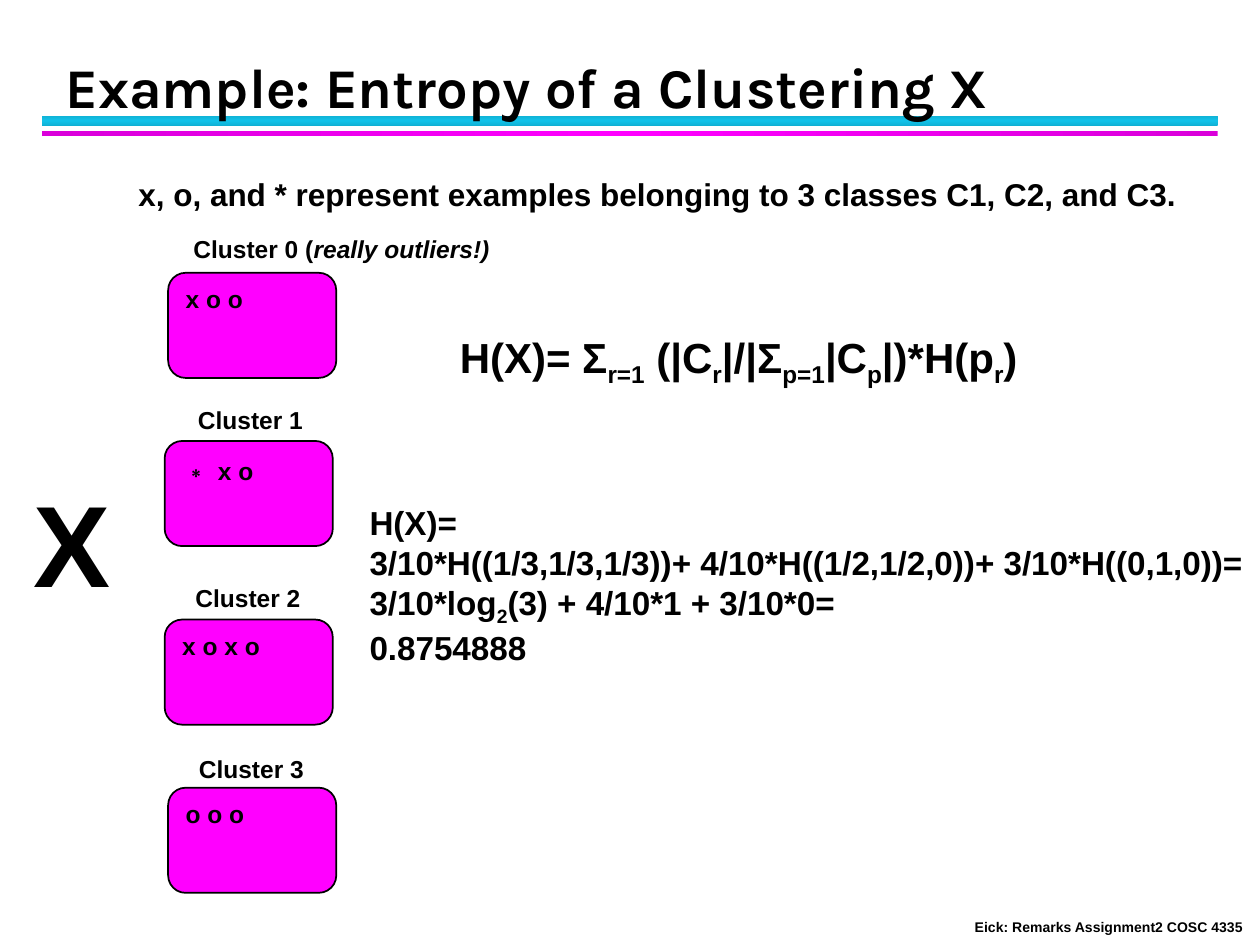
import copy
import dataclasses

import pptx
import pptx.dml.color
import pptx.enum.shapes
import pptx.enum.text
import pptx.oxml.ns
import pptx.util
from pptx.util import Cm


@dataclasses.dataclass(frozen=True)
class Theme:
    body_font: str = "Arial"
    title_font: str = "Karla"
    ink: str = "000000"
    cluster: str = "FF00FF"
    cyan_edge: str = "10B0D3"
    cyan_middle: str = "12C2E9"
    magenta_edge: str = "DA00DA"
    magenta_middle: str = "FF00FF"
    title: int = 32
    title_line: int = 36
    symbol: int = 66
    formula: int = 24
    working: int = 19
    intro: int = 18
    star: int = 16
    label: int = 14
    footer: int = 8


def rgb(value):
    return pptx.dml.color.RGBColor.from_string(value)


def write(para, text, *, size, font, color, marked_size=None,
          marked_italic=False, marked_base=None):
    """Write bold text; parts between underscores take the marked format."""
    para.alignment = pptx.enum.text.PP_ALIGN.LEFT
    for index, part in enumerate(text.split("_")):
        if not part:
            continue
        marked = index % 2 == 1
        span = para.add_run()
        span.text = part
        span.font.name = font
        span.font.bold = True
        span.font.color.rgb = rgb(color)
        span.font.size = pptx.util.Pt(marked_size if marked and marked_size else size)
        if marked and marked_italic:
            span.font.italic = True
        if marked and marked_base:
            span.font._element.set("baseline", str(marked_base * 1000))


class SlideBuilder:
    def __init__(self, deck, theme):
        self.theme = theme
        self.page = deck.slides.add_slide(deck.slide_layouts[5])
        self.shapes = self.page.shapes

    def title(self, text, left, top, width, height):
        box = self.shapes.title
        box.left, box.top, box.width, box.height = map(Cm, (left, top, width, height))
        frame = box.text_frame
        frame.auto_size = pptx.enum.text.MSO_AUTO_SIZE.NONE
        frame.vertical_anchor = pptx.enum.text.MSO_ANCHOR.BOTTOM
        para = frame.paragraphs[0]
        para.line_spacing = pptx.util.Pt(self.theme.title_line)
        write(para, text, size=self.theme.title, font=self.theme.title_font,
              color=self.theme.ink)
        # The descenders of the title lie over the bars.
        self.shapes._spTree.append(box._element)

    def bar(self, top, height, edge, middle, angle):
        bar = self.shapes.add_shape(pptx.enum.shapes.MSO_SHAPE.RECTANGLE,
                                    Cm(0.85), Cm(top), Cm(23.7), Cm(height))
        bar.shadow.inherit = False
        bar.line.fill.background()
        bar.fill.gradient()
        bar.fill.gradient_angle = angle
        stops = bar._element.spPr.find(".//" + pptx.oxml.ns.qn("a:gsLst"))
        stops.append(copy.deepcopy(stops[0]))
        for stop, position, color in zip(bar.fill.gradient_stops, (0, 0.5, 1),
                                         (edge, middle, edge)):
            stop.position = position
            stop.color.rgb = rgb(color)

    def text(self, text, left, top, width, height, size, wrap=False, **marks):
        box = self.shapes.add_textbox(Cm(left), Cm(top), Cm(width), Cm(height))
        frame = box.text_frame
        frame.word_wrap = wrap
        frame.auto_size = pptx.enum.text.MSO_AUTO_SIZE.SHAPE_TO_FIT_TEXT
        for index, line in enumerate(text.split("\n")):
            para = frame.add_paragraph() if index else frame.paragraphs[0]
            write(para, line, size=size, font=self.theme.body_font,
                  color=self.theme.ink, **marks)

    def cluster(self, members, left, top):
        box = self.shapes.add_shape(pptx.enum.shapes.MSO_SHAPE.ROUNDED_RECTANGLE,
                                    Cm(left), Cm(top), Cm(3.39), Cm(2.12))
        box.shadow.inherit = False
        box.fill.solid()
        box.fill.fore_color.rgb = rgb(self.theme.cluster)
        box.line.color.rgb = rgb(self.theme.ink)
        box.line.width = pptx.util.Pt(1)
        box.text_frame.vertical_anchor = pptx.enum.text.MSO_ANCHOR.TOP
        write(box.text_frame.paragraphs[0], members, size=self.theme.label,
              font=self.theme.body_font, color=self.theme.ink,
              marked_size=self.theme.star)


def main():
    theme = Theme()
    deck = pptx.Presentation()
    deck.slide_width, deck.slide_height = Cm(25.4), Cm(19.05)
    slide = SlideBuilder(deck, theme)

    slide.bar(2.33, 0.21, theme.cyan_edge, theme.cyan_middle, 90)
    slide.bar(2.64, 0.11, theme.magenta_edge, theme.magenta_middle, 0)
    slide.text("Eick: Remarks Assignment2 COSC 4335", 19.4, 18.4, 6, 0.6, theme.footer)
    slide.title("Example: Entropy of a Clustering X", 1.06, 0.42, 23, 2.12)

    slide.text("x, o, and * represent examples belonging to 3 classes C1, C2, and C3.",
               2.54, 3.4, 21.64, 1.02, theme.intro)

    # Members, box left and top, label, label left, top and width
    clusters = [
        ("x o o", 3.39, 5.5, "Cluster 0 (_really outliers!)_", 3.65, 4.6, 6.5),
        ("_∗ _x o", 3.32, 8.89, "Cluster 1", 3.74, 8.04, 2.65),
        ("x o x o", 3.32, 12.49, "Cluster 2", 3.69, 11.63, 2.65),
        ("o o o", 3.39, 15.88, "Cluster 3", 3.76, 15.07, 2.65),
    ]
    for members, left, top, label, label_left, label_top, label_width in clusters:
        slide.cluster(members, left, top)
        slide.text(label, label_left, label_top, label_width, 0.86, theme.label,
                   marked_italic=True)

    slide.text("X", 0.43, 9.4, 2.08, 3.07, theme.symbol)
    slide.text("H(X)=\n"
               "3/10*H((1/3,1/3,1/3))+ 4/10*H((1/2,1/2,0))+ 3/10*H((0,1,0))=\n"
               "3/10*log_2_(3) + 4/10*1 + 3/10*0=\n"
               "0.8754888",
               7.2, 10, 18.4, 3.5, theme.working, marked_base=-25)
    slide.text("H(X)= Σ_r=1_ (|C_r_|/|Σ_p=1_|C_p_|)*H(p_r_)",
               9.02, 6.55, 23.8, 2.31, theme.formula, wrap=True, marked_base=-25)

    deck.save("out.pptx")


if __name__ == "__main__":
    main()
